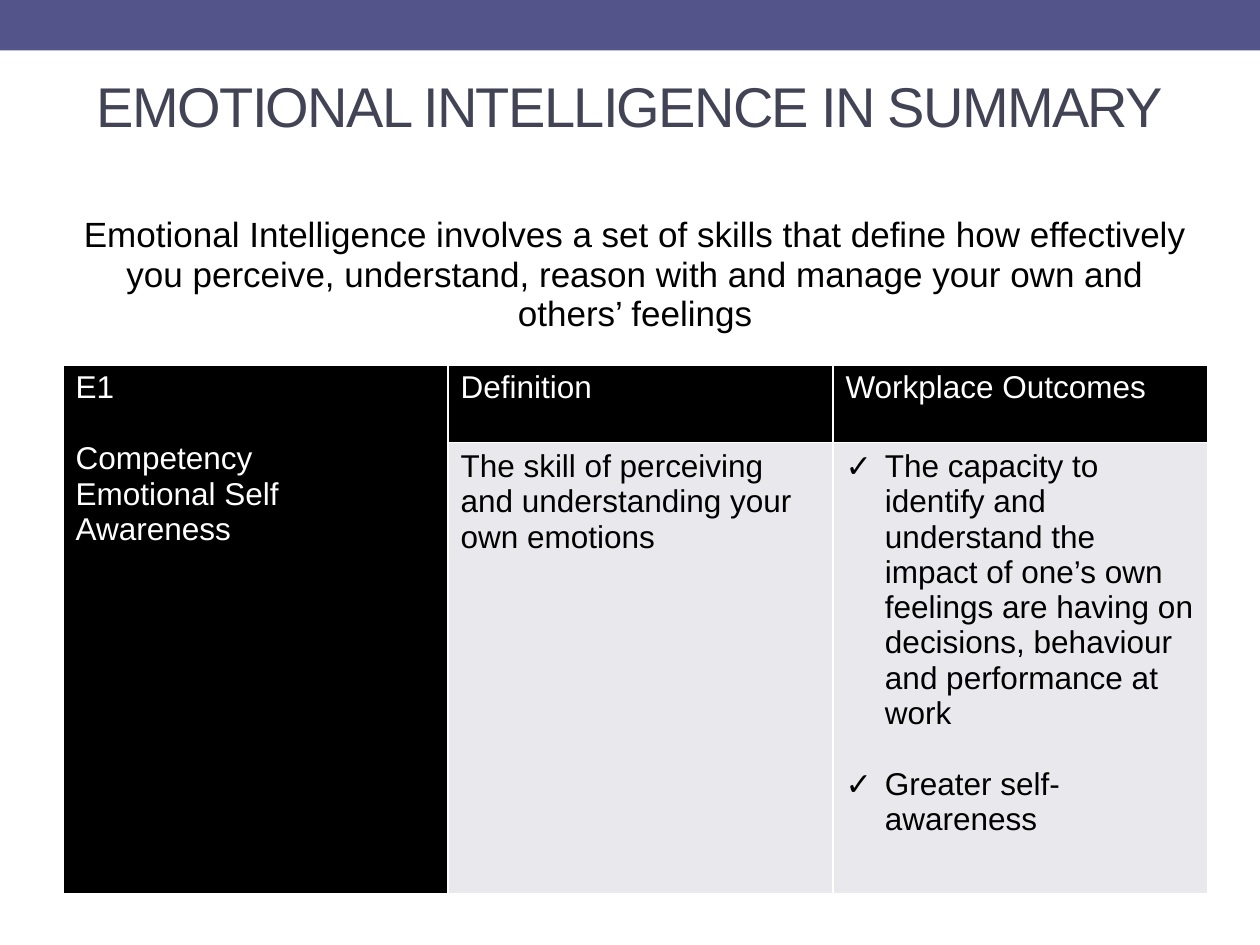
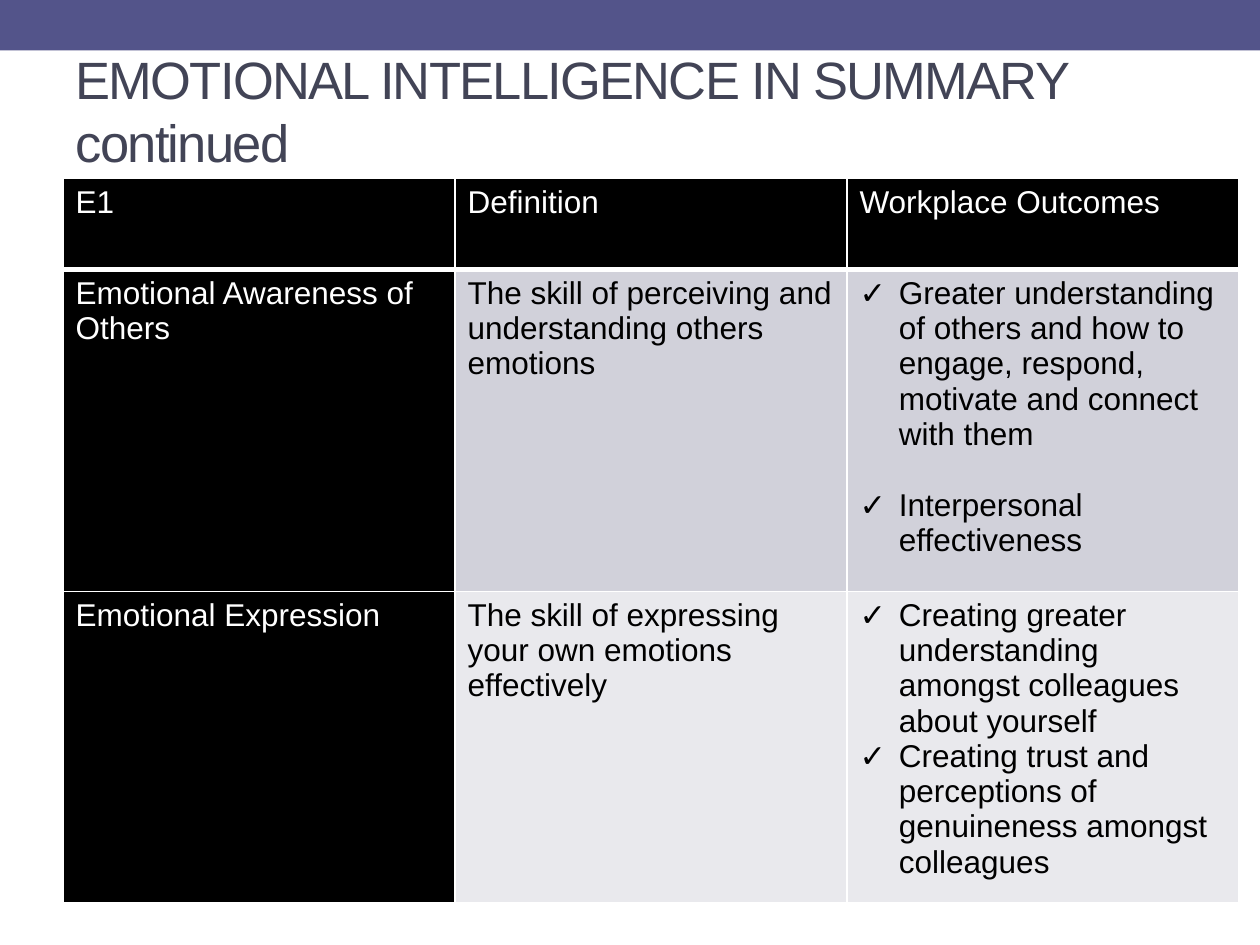
from lxml.etree import SubElement
from pptx import Presentation
from pptx.dml.color import RGBColor
from pptx.enum.shapes import MSO_SHAPE
from pptx.enum.text import MSO_ANCHOR, MSO_AUTO_SIZE, PP_ALIGN
from pptx.oxml.ns import qn
from pptx.util import Pt

# Shared look
BAND = RGBColor(0x53, 0x54, 0x8A)
TITLE = RGBColor(0x42, 0x44, 0x56)
BLACK = RGBColor(0, 0, 0)
WHITE = RGBColor(0xFF, 0xFF, 0xFF)
LILAC = RGBColor(0xD1, 0xD1, 0xDA)
PALE = RGBColor(0xE9, 0xE9, 0xED)
FONT = "Arial"
LEFT = 36
GAP = 20.5
INDENT = 22.5
THIN, THICK = 1, 3

# Content: each row is (kind, height, fill, cells); each cell is a list of paragraphs
HEADINGS = [["Definition"], ["Workplace Outcomes"]]
SPACED = {"Competency", "Greater self-awareness", "Interpersonal effectiveness"}
PAGES = [
    {
        "title": "EMOTIONAL INTELLIGENCE IN SUMMARY",
        "title_size": 32, "title_height": 60, "title_align": PP_ALIGN.CENTER,
        "top": 120, "columns": [220, 220, 214],
        "merges": [((0, 0), (0, 2)), ((1, 0), (2, 0))],
        "rows": [
            ("intro", 88, WHITE, [[
                "Emotional Intelligence involves a set of skills that define how effectively "
                "you perceive, understand, reason with and manage your own and others’ feelings"],
                [], []]),
            ("header", 45, BLACK,
             [["E1", "Competency", "Emotional Self Awareness"], *HEADINGS]),
            ("body", 257.5, PALE, [
                [],
                ["The skill of perceiving and understanding your own emotions"],
                ["The capacity to identify and understand the impact of one’s own feelings "
                 "are having on decisions, behaviour and performance at work",
                 "Greater self-awareness"]]),
        ],
    },
    {
        "title": "EMOTIONAL INTELLIGENCE IN SUMMARY continued",
        "title_size": 30, "title_height": 66, "title_align": PP_ALIGN.LEFT,
        "top": 102, "columns": [224, 224, 224],
        "merges": [],
        "rows": [
            ("header", 52, BLACK, [["E1"], *HEADINGS]),
            ("body", 184, LILAC, [
                ["Emotional Awareness of Others"],
                ["The skill of perceiving and understanding others emotions"],
                ["Greater understanding of others and how to engage, respond, "
                 "motivate and connect with them",
                 "Interpersonal effectiveness"]]),
            ("body", 178, PALE, [
                ["Emotional Expression"],
                ["The skill of expressing your own emotions effectively"],
                ["Creating greater understanding amongst colleagues about yourself",
                 "Creating trust and perceptions of genuineness amongst colleagues"]]),
        ],
    },
]


def format_font(font, size, colour):
    for name, value in {"name": FONT, "size": Pt(size), "bold": False}.items():
        setattr(font, name, value)
    font.color.rgb = colour


def draw_borders(cell, widths):
    properties = cell._tc.get_or_add_tcPr()
    for side, width in widths.items():
        line = SubElement(properties, qn(f"a:ln{side}"), w=str(Pt(width)))
        solid = SubElement(line, qn("a:solidFill"))
        SubElement(solid, qn("a:srgbClr"), val=str(WHITE))


deck = Presentation()
deck.slide_width, deck.slide_height = Pt(720), Pt(540)

for page in PAGES:
    slide = deck.slides.add_slide(deck.slide_layouts[5])

    # Top band
    band = slide.shapes.add_shape(MSO_SHAPE.RECTANGLE, 0, 0, deck.slide_width, Pt(28.8))
    band.shadow.inherit = False
    band.fill.solid()
    band.fill.fore_color.rgb = BAND
    band.line.fill.background()

    # Title
    heading = slide.shapes.title
    place = {"left": LEFT, "top": 30, "width": 648, "height": page["title_height"]}
    for name, value in place.items():
        setattr(heading, name, Pt(value))
    frame = heading.text_frame
    frame.text = page["title"]
    frame_format = {"word_wrap": True, "auto_size": MSO_AUTO_SIZE.NONE,
                    "vertical_anchor": MSO_ANCHOR.MIDDLE}
    for name, value in frame_format.items():
        setattr(frame, name, value)
    frame.paragraphs[0].alignment = page["title_align"]
    title_font = frame.paragraphs[0].runs[0].font
    format_font(title_font, page["title_size"], TITLE)
    title_font._element.set("spc", "-100")

    # Competency table
    rows, columns = page["rows"], page["columns"]
    competencies = slide.shapes.add_table(
        len(rows), len(columns), Pt(LEFT), Pt(page["top"]),
        Pt(sum(columns)), Pt(sum(row[1] for row in rows))).table
    competencies.first_row = competencies.horz_banding = False
    for column, width in zip(competencies.columns, columns):
        column.width = Pt(width)
    for (first, last) in page["merges"]:
        competencies.cell(*first).merge(competencies.cell(*last))

    for r, (kind, height, row_fill, cells) in enumerate(rows):
        competencies.rows[r].height = Pt(height)
        for c, paragraphs in enumerate(cells):
            cell = competencies.cell(r, c)
            dark = kind == "header" or (kind == "body" and c == 0)
            draw_borders(cell, {
                "L": THIN, "R": THIN,
                "T": THICK if r == 1 else THIN,
                "B": THICK if r == 0 else THIN})
            cell.fill.solid()
            cell.fill.fore_color.rgb = BLACK if dark else row_fill

            for i, text in enumerate(paragraphs):
                words = cell.text_frame
                paragraph = words.paragraphs[0] if i == 0 else words.add_paragraph()
                run = paragraph.add_run()
                run.text = text
                format_font(run.font, 20 if kind == "intro" else 18, WHITE if dark else BLACK)
                if kind == "intro":
                    paragraph.alignment = PP_ALIGN.CENTER
                if text in SPACED:
                    paragraph.space_before = Pt(GAP)
                # Outcomes are ticked
                if kind == "body" and c == 2:
                    tick = paragraph._p.get_or_add_pPr()
                    tick.set("marL", str(Pt(INDENT)))
                    tick.set("indent", str(-Pt(INDENT)))
                    SubElement(tick, qn("a:buFont"), typeface=FONT)
                    SubElement(tick, qn("a:buChar"), char="✓")

deck.save("out.pptx")
